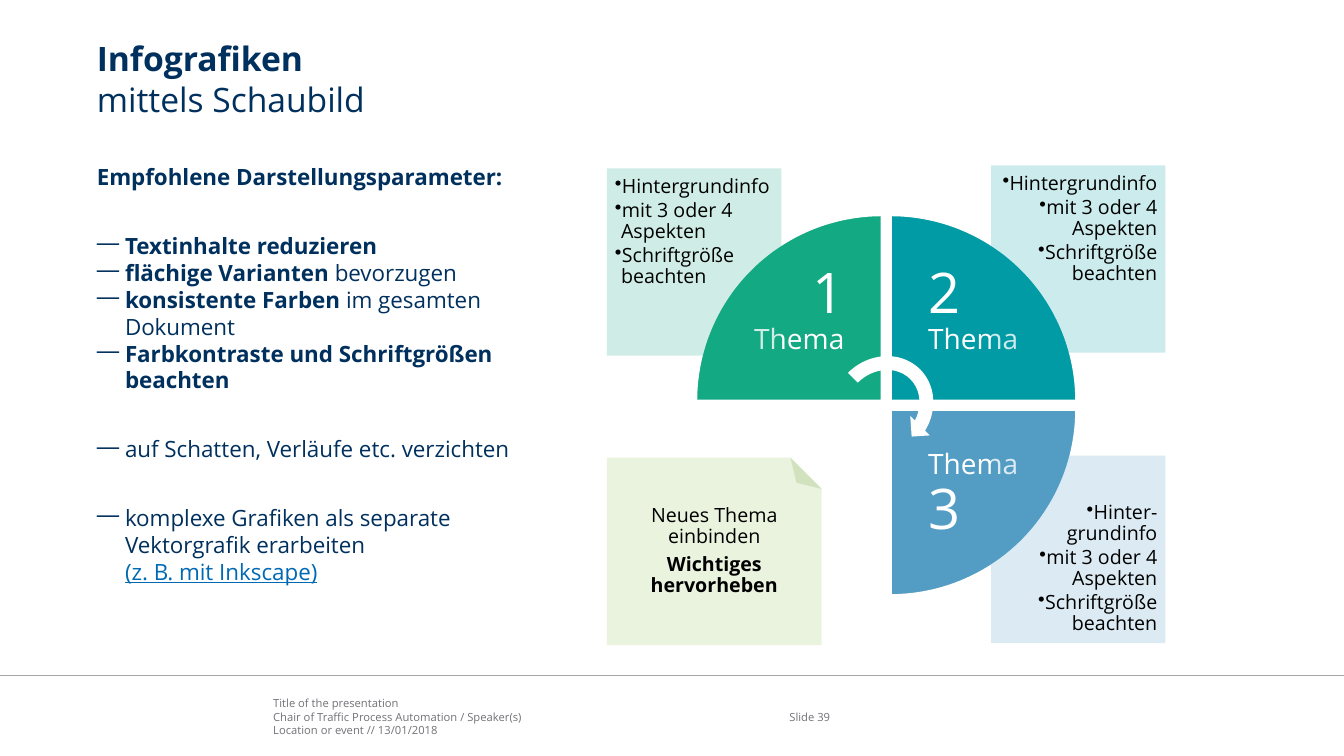
from collections import namedtuple
from math import cos, radians, sin

from lxml import etree
from pptx import Presentation
from pptx import util as u
from pptx.dml.color import RGBColor
from pptx.enum import shapes, text
from pptx.oxml.ns import qn

NAVY = RGBColor(0x00, 0x30, 0x5D)
LINK = RGBColor(0x00, 0x69, 0xB4)
GREY = RGBColor(0x72, 0x72, 0x77)
RULE = RGBColor(0xA6, 0xA6, 0xA6)
GREEN = RGBColor(0x13, 0xA9, 0x83)
TEAL = RGBColor(0x00, 0x9B, 0xA4)
BLUE = RGBColor(0x53, 0x9D, 0xC5)
LIME = RGBColor(0x93, 0xC3, 0x56)
OLIVE = RGBColor(0x76, 0x9C, 0x45)
WHITE = RGBColor(0xFF, 0xFF, 0xFF)
BLACK = RGBColor(0x00, 0x00, 0x00)

FONT = "Open Sans"
LEFT, CENTER, RIGHT = (text.PP_ALIGN.LEFT, text.PP_ALIGN.CENTER, text.PP_ALIGN.RIGHT)
TOP, MIDDLE, BOTTOM = (text.MSO_ANCHOR.TOP, text.MSO_ANCHOR.MIDDLE, text.MSO_ANCHOR.BOTTOM)
BREAK = "\n"

Box = namedtuple("Box", "left top width height")
TITLE = Box(0.96, 0.38, 11.57, 0.75)
BODY = Box(0.96, 1.62, 4.71, 4.65)
DIAGRAM = Box(6.02, 1.64, 5.54, 4.76)
FOOTER = Box(0, 6.7, 13.33, 0.8)


def inches(box):
    return [u.Inches(value) for value in box]


def format_frame(frame, margins=(0, 0, 0, 0), anchor=TOP):
    left, top, right, bottom = inches(margins)
    settings = dict(margin_left=left, margin_top=top, margin_right=right, margin_bottom=bottom,
                    word_wrap=True, vertical_anchor=anchor)
    for name, value in settings.items():
        setattr(frame, name, value)


def add_bullet(paragraph, character, indent):
    properties = paragraph._p.get_or_add_pPr()
    properties.set("marL", str(u.Inches(indent)))
    properties.set("indent", str(-u.Inches(indent)))
    etree.SubElement(properties, qn("a:buChar")).set("char", character)


def write(frame, paragraphs, size, color, spacing=1.0, align=LEFT, after=0, bullet=None):
    """Each paragraph is a list of (words, font changes) pairs or BREAK."""
    for index, parts in enumerate(paragraphs):
        paragraph = frame.add_paragraph() if index else frame.paragraphs[0]
        if bullet:
            add_bullet(paragraph, *bullet)
        paragraph.alignment = align
        paragraph.line_spacing = spacing
        paragraph.space_after = u.Pt(after)
        paragraph.space_before = u.Pt(0)
        for part in parts:
            if part == BREAK:
                paragraph.add_line_break()
                continue
            words, changes = part
            run = paragraph.add_run()
            run.text = words
            style = dict(name=FONT, size=size, bold=False, color=color) | changes
            run.font.color.rgb = style.pop("color")
            style["size"] = u.Pt(style["size"])
            for name, value in style.items():
                setattr(run.font, name, value)


def add_text(slide, box, anchor):
    frame = slide.shapes.add_textbox(*inches(box)).text_frame
    format_frame(frame, anchor=anchor)
    return frame


def paint(shape, color, alpha=None, line=None):
    shape.shadow.inherit = False
    shape.fill.solid()
    shape.fill.fore_color.rgb = color
    if alpha:
        fill_color = shape.element.spPr.find(qn("a:solidFill")).find(qn("a:srgbClr"))
        etree.SubElement(fill_color, qn("a:alpha")).set("val", str(alpha * 1000))
    if line:
        shape.line.color.rgb = line
        shape.line.width = u.Pt(1.5)
    else:
        shape.line.fill.background()


def add_outline(slide, points):
    start, *others = [inches(point) for point in points]
    builder = slide.shapes.build_freeform(*start, scale=1.0)
    builder.add_line_segments(others, close=True)
    return builder.convert_to_shape()


def add_title(slide, box):
    title = slide.shapes.title
    title.left, title.top, title.width, title.height = inches(box)
    format_frame(title.text_frame)
    write(title.text_frame, [[("Infografiken ", dict(bold=True)), BREAK, ("mittels Schaubild", {})]],
          24, NAVY)


def add_body(slide, box):
    bold = dict(bold=True)
    items = [
        [("Textinhalte reduzieren", bold)],
        [("flächige Varianten ", bold), ("bevorzugen", {})],
        [("konsistente Farben ", bold), ("im gesamten Dokument", {})],
        [("Farbkontraste und Schriftgrößen beachten", bold)],
        [("auf Schatten, Verläufe etc. verzichten", {})],
        [("komplexe Grafiken als separate Vektorgrafik erarbeiten", {}), BREAK,
         ("(z. B. mit Inkscape)", dict(color=LINK, underline=True))],
    ]
    heading = [("Empfohlene Darstellungsparameter:", bold)]
    frame = add_text(slide, box, TOP)
    write(frame, [heading] + items, 16, NAVY)
    for paragraph in frame.paragraphs[1:]:
        add_bullet(paragraph, "—", 0.28)
    for index in (1, 5, 6):
        frame.paragraphs[index].space_before = u.Pt(30)


def add_wedge(slide, corner, radius, start_angle, color, margins, align, parts):
    """Draw a quarter disc whose right angle sits at corner."""
    x, y = corner
    angles = [radians(start_angle + step) for step in range(0, 91, 2)]
    arc = [(x + radius * cos(angle), y + radius * sin(angle)) for angle in angles]
    wedge = add_outline(slide, [corner] + arc)
    paint(wedge, color, line=WHITE)
    format_frame(wedge.text_frame, margins, MIDDLE)
    write(wedge.text_frame, [parts], 20, WHITE, 0.9, align)


def add_card(slide, box, color, anchor, align, first_line):
    card = slide.shapes.add_shape(shapes.MSO_SHAPE.RECTANGLE, *inches(box))
    paint(card, color, alpha=20)
    format_frame(card.text_frame, [0.08] * 4, anchor)
    lines = (first_line, "mit 3 oder 4 Aspekten", "Schriftgröße beachten")
    write(card.text_frame, [[(line, {})] for line in lines], 14, BLACK, 0.9, align, 2, ("•", 0.06))


def add_note(slide, box):
    right, bottom, fold = box.left + box.width, box.top + box.height, 0.31
    fold_start, fold_end = (right - fold, box.top), (right, box.top + fold)
    note = add_outline(slide, [(box.left, bottom), (box.left, box.top), fold_start, fold_end,
                               (right, bottom)])
    paint(note, LIME, alpha=20)
    format_frame(note.text_frame, [0.16] * 4, MIDDLE)
    write(note.text_frame, [[("Neues Thema einbinden", {})],
                            [("Wichtiges hervorheben", dict(bold=True))]],
          14, BLACK, 0.9, CENTER, 5)
    flap = add_outline(slide, [fold_end, (right - 0.25, box.top + 0.25), fold_start])
    paint(flap, OLIVE, alpha=20)


def add_diagram(slide, box):
    radius, half_gap, width, height = 1.84, 0.045, 1.73, 1.86
    middle_x, middle_y = box.left + box.width / 2, box.top + box.height / 2
    card_right = box.left + box.width - width
    low = box.top + box.height - height
    big = dict(size=40)
    quarters = [
        (-1, -1, 180, GREEN, (0.52, 0.52, 0.37, 0.47), RIGHT, [("1", big), BREAK, ("Thema", {})],
         (box.left, box.top + 0.03), TOP, LEFT, "Hintergrundinfo"),
        (1, -1, 270, TEAL, (0.37, 0.52, 0.5, 0.47), LEFT, [("2", big), BREAK, ("Thema", {})],
         (card_right, box.top), TOP, RIGHT, "Hintergrundinfo"),
        (1, 1, 0, BLUE, (0.37, 0.39, 0.5, 0.52), LEFT, [("Thema ", {}), ("3", big)],
         (card_right, low - 0.02), BOTTOM, RIGHT, "Hinter-grundinfo"),
    ]
    for (side_x, side_y, angle, color, margins, align, parts,
         place, anchor, card_align, first_line) in quarters:
        corner = (middle_x + side_x * half_gap, middle_y + side_y * half_gap)
        add_wedge(slide, corner, radius, angle, color, margins, align, parts)
        add_card(slide, Box(*place, width, height), color, anchor, card_align, first_line)
    add_note(slide, Box(box.left, low, 2.13, height))
    arrow_box = Box(middle_x - 0.59, middle_y - 0.58, 1.1, 1.2)
    arrow = slide.shapes.add_shape(shapes.MSO_SHAPE.CIRCULAR_ARROW, *inches(arrow_box))
    arrow.rotation = 45
    paint(arrow, WHITE)


def add_footer(slide, box):
    left, top, right = inches((box.left, box.top, box.left + box.width))
    rule = slide.shapes.add_connector(shapes.MSO_CONNECTOR.STRAIGHT, left, top, right, top)
    rule.line.color.rgb = RULE
    rule.line.width = u.Pt(1)
    etree.SubElement(rule.element.spPr, qn("a:effectLst"))
    lines = ("Title of the presentation", "Chair of Traffic Process Automation / Speaker(s)",
             "Location or event // 13/01/2018")
    for x, width, anchor, words in ((2.71, 4.9, BOTTOM, lines), (7.83, 0.77, MIDDLE, ["Slide 39"])):
        frame = add_text(slide, Box(box.left + x, box.top + 0.21, width, 0.4), anchor)
        write(frame, [[(line, {})] for line in words], 8, GREY)


def main():
    presentation = Presentation()
    presentation.slide_width, presentation.slide_height = inches((13.33, 7.5))
    slide = presentation.slides.add_slide(presentation.slide_layouts[5])
    add_footer(slide, FOOTER)
    add_title(slide, TITLE)
    add_body(slide, BODY)
    add_diagram(slide, DIAGRAM)
    presentation.save("out.pptx")


if __name__ == "__main__":
    main()
